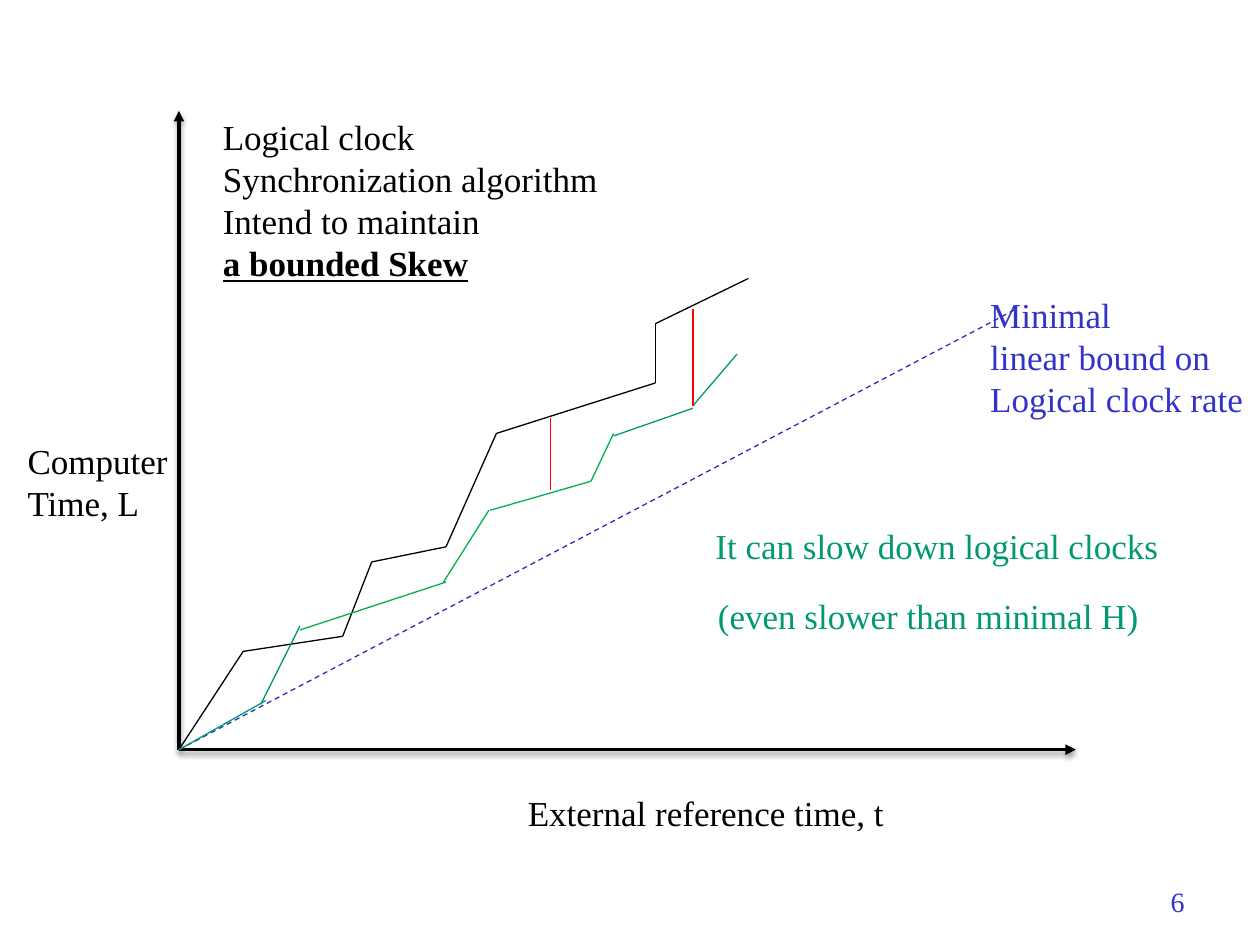
from itertools import pairwise

from lxml import etree
from pptx import Presentation
from pptx import util as u
from pptx.dml.color import RGBColor
from pptx.enum import dml, shapes, text
from pptx.oxml import ns

COLORS = {
    "black": "000000",
    "blue": "3333CC",
    "navy": "2D2DB9",
    "teal": "009973",
    "green": "00B050",
    "red": "FF0000",
}
COLUMNS, ROWS = 100, 75
ORIGIN = (14.2, 59.5)
FAST_CLOCK = [
    ORIGIN, (19.3, 51.7), (27.2, 50.5), (29.5, 44.6), (35.4, 43.4),
    (39.4, 34.4), (52, 30.4), (52, 25.7), (59.4, 22.1),
]
SLOW_CLOCK = [
    (ORIGIN, (21.1, 55.6), "teal"),
    ((20.7, 55.9), (23.8, 49.7), "teal"),
    ((23.8, 50), (35.4, 46.2), "green"),
    ((35.2, 46.2), (38.8, 40.5), "green"),
    ((38.9, 40.5), (46.9, 38.2), "green"),
    ((46.9, 38.2), (48.7, 34.4), "green"),
    ((48.7, 34.6), (55, 32.4), "teal"),
    ((55, 32.2), (58.5, 28.1), "teal"),
]
SKEWS = [((43.7, 33.2), (43.7, 38.9)), ((55, 24.5), (55, 32.2))]


def write(paragraph, content, size=20, color="black", bold=None, underline=None, align=None):
    """Add formatted text to a paragraph."""
    paragraph.alignment = align
    run = paragraph.add_run()
    run.text = content
    font = run.font
    font.name, font.size = "Times New Roman", u.Pt(size)
    font.bold, font.underline = bold, underline
    font.color.rgb = RGBColor.from_string(COLORS[color])


class Diagram:
    """Draw styled elements on one slide, measured in grid columns and rows."""

    def __init__(self, presentation):
        self.column = presentation.slide_width / COLUMNS
        self.row = presentation.slide_height / ROWS
        self.slide = presentation.slides.add_slide(presentation.slide_layouts[6])

    def place(self, *lengths):
        """Convert alternating columns and rows to slide lengths."""
        return [u.Emu(round(length * (self.row if index % 2 else self.column)))
                for index, length in enumerate(lengths)]

    def line(self, start, end, color="black", width=0.75, dashed=False):
        """Draw a straight line without a shadow."""
        connector = self.slide.shapes.add_connector(
            shapes.MSO_CONNECTOR.STRAIGHT, *self.place(*start, *end))
        connector.line.color.rgb = RGBColor.from_string(COLORS[color])
        connector.line.width = u.Pt(width)
        if dashed:
            connector.line.dash_style = dml.MSO_LINE.DASH
        etree.SubElement(connector._element.spPr, ns.qn("a:effectLst"))
        return connector

    def axis(self, end):
        """Draw a shadowed arrow from the origin."""
        properties = self.line(ORIGIN, end, width=2)._element.spPr
        etree.SubElement(properties.find(ns.qn("a:ln")), ns.qn("a:tailEnd"), type="triangle")
        shadow = etree.SubElement(
            properties.find(ns.qn("a:effectLst")), ns.qn("a:outerShdw"),
            blurRad="40000", dist="20000", dir="5400000", rotWithShape="0")
        shade = etree.SubElement(shadow, ns.qn("a:srgbClr"), val=COLORS["black"])
        etree.SubElement(shade, ns.qn("a:alpha"), val="38000")

    def label(self, box, *lines, wrap=False, emphasis=None, middle=False, **style):
        """Place a text box with one paragraph for each line."""
        frame = self.slide.shapes.add_textbox(*self.place(*box)).text_frame
        frame.word_wrap = wrap
        frame.auto_size = (text.MSO_AUTO_SIZE.NONE if middle
                           else text.MSO_AUTO_SIZE.SHAPE_TO_FIT_TEXT)
        frame.vertical_anchor = text.MSO_ANCHOR.MIDDLE if middle else text.MSO_ANCHOR.TOP
        for index, content in enumerate(lines):
            paragraph = frame.add_paragraph() if index else frame.paragraphs[0]
            strong = True if content == emphasis else None
            write(paragraph, content, bold=strong, underline=strong, **style)


def main():
    """Build and save the clock diagram."""
    presentation = Presentation()
    presentation.slide_width, presentation.slide_height = u.Inches(10), u.Inches(7.5)
    diagram = Diagram(presentation)

    diagram.label((71.7, 69.5, 23.3, 4), "6", wrap=True, middle=True,
                  size=16, color="blue", align=text.PP_ALIGN.RIGHT)
    diagram.axis((85.4, 59.5))
    diagram.axis((14.2, 8.8))
    diagram.label((1.2, 34.4, 18.1, 7.7), "Computer", "Time, L", wrap=True)
    diagram.label((40.9, 62.3, 30.5, 4.4), "External reference time, t")

    diagram.line(ORIGIN, (80.7, 24.5), "navy", dashed=True)
    diagram.label((77.6, 22.8, 22.2, 11.1), "Minimal", "linear bound on",
                  "Logical clock rate", color="blue")

    for start, end in pairwise(FAST_CLOCK):
        diagram.line(start, end)
    for start, end, color in SLOW_CLOCK:
        diagram.line(start, end, color)
    for start, end in SKEWS:
        diagram.line(start, end, "red")

    diagram.label((16.7, 8.7, 34.7, 17.8), "Logical clock", "Synchronization algorithm",
                  "Intend to maintain", "a bounded Skew", wrap=True, emphasis="a bounded Skew")
    diagram.label((55.8, 41.1, 37.4, 4.4), "It can slow down logical clocks", color="teal")
    diagram.label((56, 46.7, 35.6, 4.4), "(even slower than minimal H)", color="teal")
    presentation.save("out.pptx")


if __name__ == "__main__":
    main()
